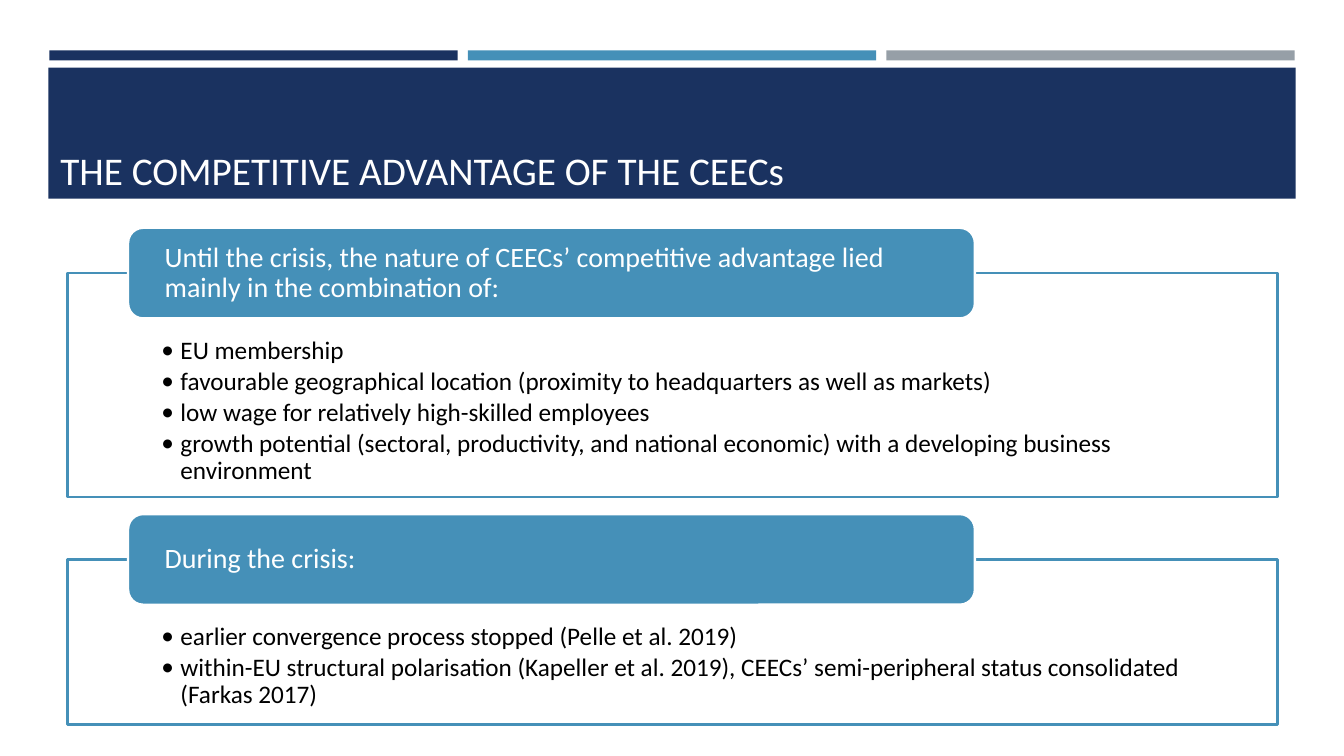
from lxml import etree
from pptx import Presentation
from pptx.dml.color import RGBColor
from pptx.enum.shapes import MSO_SHAPE
from pptx.enum.text import MSO_ANCHOR, PP_ALIGN
from pptx.oxml.ns import qn
from pptx.util import Emu, Pt

RECT, ROUNDED = MSO_SHAPE.RECTANGLE, MSO_SHAPE.ROUNDED_RECTANGLE
TOP, MIDDLE, BOTTOM = MSO_ANCHOR.TOP, MSO_ANCHOR.MIDDLE, MSO_ANCHOR.BOTTOM

TITLE = "THE COMPETITIVE ADVANTAGE OF THE CEECs"
SECTIONS = [
    {
        "heading": "Until the crisis, the nature of CEECs’ competitive advantage lied "
                   "mainly in the combination of:",
        "points": [
            "EU membership",
            "favourable geographical location (proximity to headquarters as well as markets)",
            "low wage for relatively high-skilled employees",
            "growth potential (sectoral, productivity, and national economic) "
            "with a developing business environment",
        ],
        "height": 222,
    },
    {
        "heading": "During the crisis:",
        "points": [
            "earlier convergence process stopped (Pelle et al. 2019)",
            "within-EU structural polarisation (Kapeller et al. 2019), "
            "CEECs’ semi-peripheral status consolidated (Farkas 2017)",
        ],
        "height": 164,
    },
]

THEME = {
    "font": "Calibri",
    "navy": "1A3260", "blue": "4590B8", "grey": "969FA7",
    "white": "FFFFFF", "black": "000000",
    "title_pt": 28, "heading_pt": 20, "point_pt": 18, "line_pt": 1.75,
    "line_spacing": 0.9, "point_gap_pt": 2.7, "frame_alpha": 90,
}

SLIDE_W, SLIDE_H = 1333, 750
BAR_LEFT, BAR_TOP, BAR_W, BAR_H, BAR_GAP = 49, 50, 405, 10, 10
BANNER = (48, 67, 1237, 130)
TITLE_BOX = (50, 72, 1200, 125)
FRAME_LEFT, FRAME_TOP, FRAME_W, FRAME_GAP = 67, 271, 1200, 62
HEADING_LEFT, HEADING_W, HEADING_H = 127, 840, 90
FRAME_INSETS = (93, 64, 93, 14)
HEADING_INSETS = (32, 0, 32, 0)
TITLE_INSETS = (10, 5, 10, 5)
BULLET_INDENT = 19


def px(length):
    return Emu(length * 9144)


def color(name):
    return RGBColor.from_string(THEME[name])


def add_block(slide, preset, box, fill, line=None):
    block = slide.shapes.add_shape(preset, *map(px, box))
    block.shadow.inherit = False
    block.fill.solid()
    block.fill.fore_color.rgb = color(fill)
    if line:
        block.line.color.rgb = color(line)
        block.line.width = Pt(THEME["line_pt"])
    else:
        block.line.fill.background()
    return block


def set_alpha(block, percent):
    fill_color = block.fill._xPr.find(qn("a:solidFill"))[0]
    etree.SubElement(fill_color, qn("a:alpha")).set("val", str(percent * 1000))


def prepare_frame(holder, insets, anchor):
    frame = holder.text_frame
    frame.word_wrap = True
    frame.vertical_anchor = anchor
    (frame.margin_left, frame.margin_top,
     frame.margin_right, frame.margin_bottom) = map(px, insets)
    return frame


def write(paragraph, text, size, ink):
    paragraph.alignment = PP_ALIGN.LEFT
    run = paragraph.add_run()
    run.text = text
    run.font.name = THEME["font"]
    run.font.size = Pt(THEME[size])
    run.font.color.rgb = color(ink)


def add_bullet(paragraph):
    paragraph.level = 1
    properties = paragraph._p.get_or_add_pPr()
    properties.set("marL", str(px(BULLET_INDENT)))
    properties.set("indent", str(-px(BULLET_INDENT)))
    etree.SubElement(properties, qn("a:buFont")).set("typeface", THEME["font"])
    etree.SubElement(properties, qn("a:buChar")).set("char", "•")


def add_header(slide):
    for column, fill in enumerate(("navy", "blue", "grey")):
        left = BAR_LEFT + column * (BAR_W + BAR_GAP)
        add_block(slide, RECT, (left, BAR_TOP, BAR_W, BAR_H), fill)
    add_block(slide, RECT, BANNER, "navy")
    title = slide.shapes.add_textbox(*map(px, TITLE_BOX))
    title_frame = prepare_frame(title, TITLE_INSETS, BOTTOM)
    write(title_frame.paragraphs[0], TITLE, "title_pt", "white")


def add_section(slide, section, top):
    outline = add_block(slide, RECT, (FRAME_LEFT, top, FRAME_W, section["height"]),
                        "white", "blue")
    set_alpha(outline, THEME["frame_alpha"])
    points_frame = prepare_frame(outline, FRAME_INSETS, TOP)
    for index, point in enumerate(section["points"]):
        paragraph = points_frame.add_paragraph() if index else points_frame.paragraphs[0]
        paragraph.line_spacing = THEME["line_spacing"]
        paragraph.space_after = Pt(THEME["point_gap_pt"])
        write(paragraph, point, "point_pt", "black")
        add_bullet(paragraph)

    heading_box = (HEADING_LEFT, top - HEADING_H // 2, HEADING_W, HEADING_H)
    heading = add_block(slide, ROUNDED, heading_box, "blue", "white")
    paragraph = prepare_frame(heading, HEADING_INSETS, MIDDLE).paragraphs[0]
    paragraph.line_spacing = THEME["line_spacing"]
    write(paragraph, section["heading"], "heading_pt", "white")


def main():
    deck = Presentation()
    deck.slide_width, deck.slide_height = px(SLIDE_W), px(SLIDE_H)
    slide = deck.slides.add_slide(deck.slide_layouts[6])
    add_header(slide)
    top = FRAME_TOP
    for section in SECTIONS:
        add_section(slide, section, top)
        top += section["height"] + FRAME_GAP
    deck.save("out.pptx")


if __name__ == "__main__":
    main()
